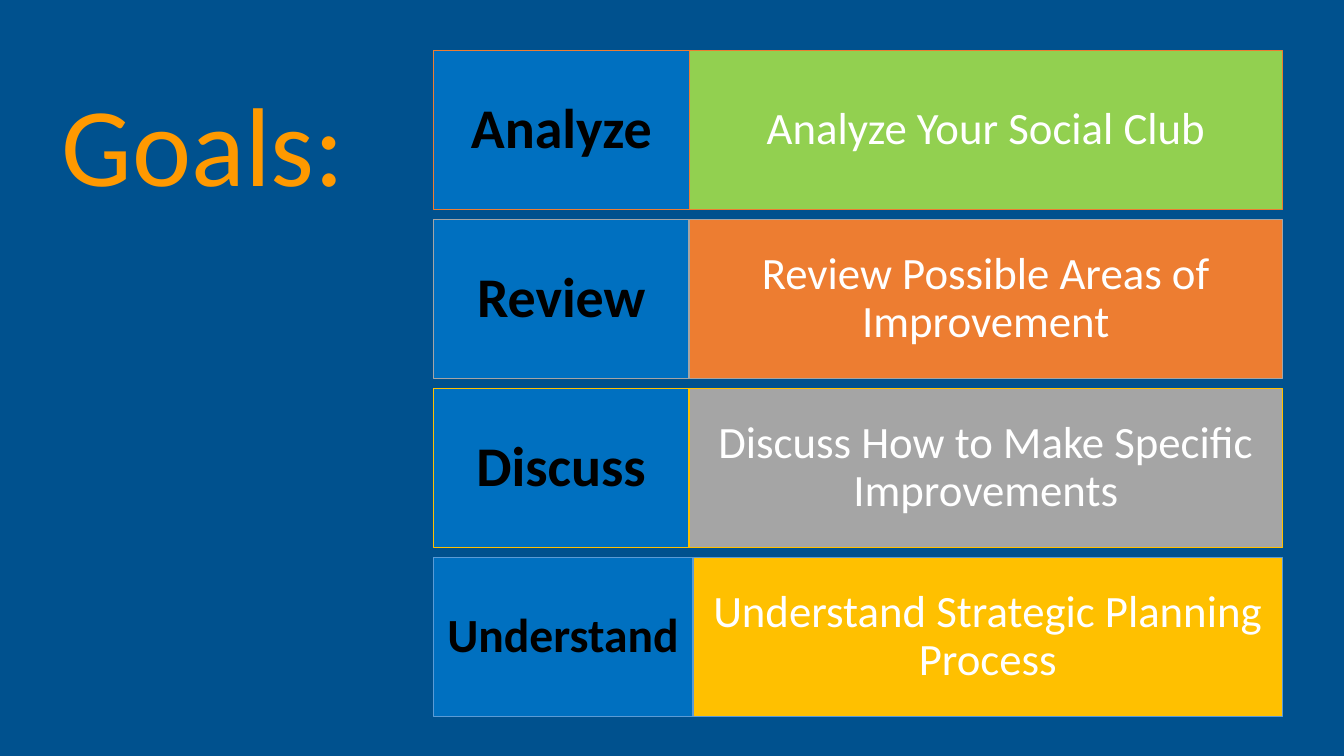
from pptx import Presentation
from pptx.dml.color import RGBColor
from pptx.enum.shapes import MSO_SHAPE as SHAPE
from pptx.enum.text import MSO_ANCHOR as ANCHOR, PP_ALIGN as ALIGN
from pptx.util import Pt


def rgb(value):
    return RGBColor.from_string(value)


def set_text(s, text, size, color, align, inset_x, inset_y, bold=False):
    tf = s.text_frame
    tf.text = text
    tf.word_wrap = True
    tf.vertical_anchor = ANCHOR.MIDDLE
    tf.margin_left = tf.margin_right = Pt(inset_x)
    tf.margin_top = tf.margin_bottom = Pt(inset_y)
    p = tf.paragraphs[0]
    p.alignment = align
    p.line_spacing = 0.9
    font = p.runs[0].font
    font.name = "Calibri"
    font.size = Pt(size)
    font.bold = bold
    font.color.rgb = rgb(color)


prs = Presentation()
prs.slide_width, prs.slide_height = Pt(960), Pt(540)
slide = prs.slides.add_slide(prs.slide_layouts[6])
slide.background.fill.solid()
slide.background.fill.fore_color.rgb = rgb("00518E")

# Title
title = slide.shapes.add_textbox(Pt(28.8), Pt(64), Pt(224.6), Pt(86.4))
set_text(title, "Goals:", 80, "FF9900", ALIGN.RIGHT, 7.2, 3.6)

# Goal rows: verb, verb size, description, description fill, outline, split
goals = [
    ("Analyze", 40, "Analyze Your Social Club", "92D050", "ED7D31", 492.5),
    ("Review", 40, "Review Possible Areas of Improvement", "ED7D31", "A5A5A5", 492.2),
    ("Discuss", 40, "Discuss How to Make Specific Improvements", "A5A5A5", "FFC000", 492.2),
    ("Understand", 34, "Understand Strategic Planning Process", "FFC000", "5B9BD5", 495),
]
left, right = 309.5, 916.2
top, height, pitch = 36, 113.8, 120.7

for i, (verb, verb_size, description, fill, outline, split) in enumerate(goals):
    # Description first, so that the verb cell lies on top of the shared edge
    cells = [
        (split, right, fill, (description, 32, "FFFFFF", ALIGN.CENTER, 8, 28.8)),
        (left, split, "0070C0", (verb, verb_size, "000000", ALIGN.CENTER, 5.8, 11.5, True)),
    ]
    for start, end, cell_fill, text in cells:
        s = slide.shapes.add_shape(
            SHAPE.RECTANGLE, Pt(start), Pt(top + i * pitch), Pt(end - start), Pt(height))
        s.shadow.inherit = False
        s.fill.solid()
        s.fill.fore_color.rgb = rgb(cell_fill)
        s.line.color.rgb = rgb(outline)
        s.line.width = Pt(1)
        set_text(s, *text)

prs.save("out.pptx")
